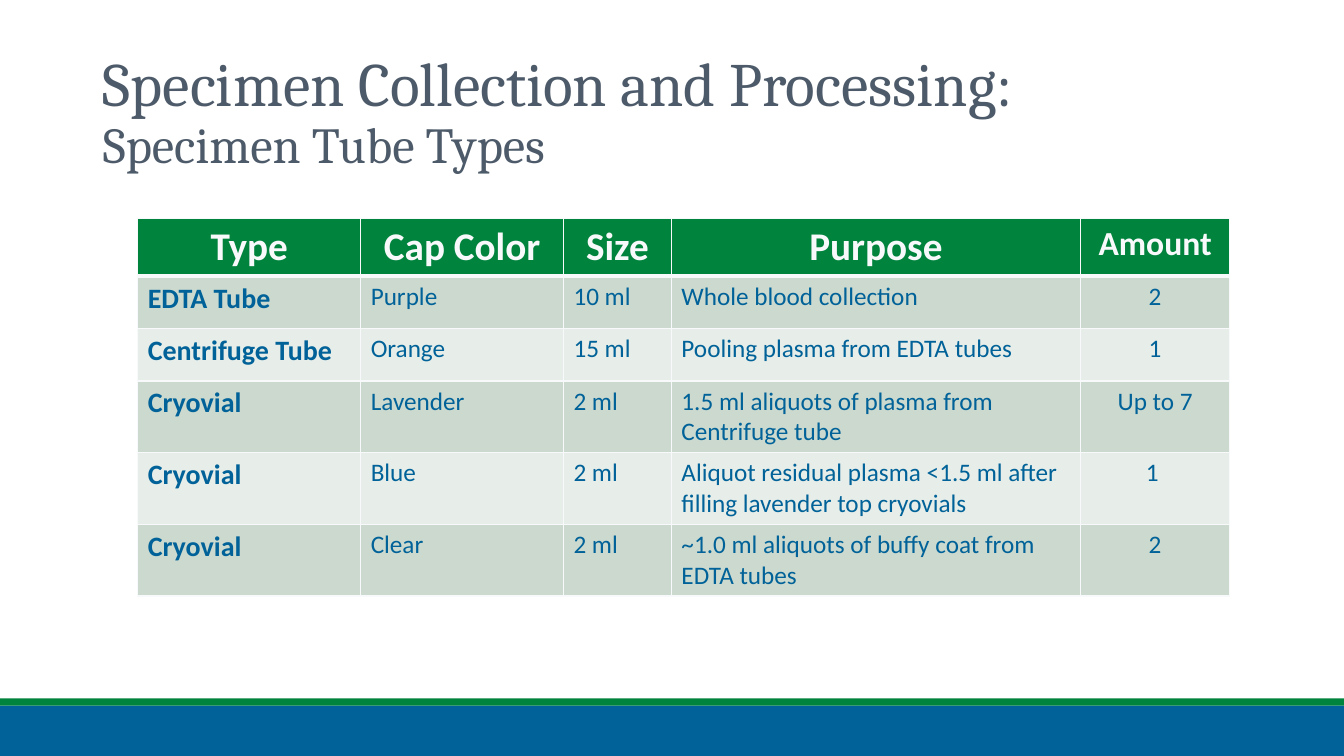
from lxml import etree
from pptx import Presentation
from pptx.dml.color import RGBColor
from pptx.enum.shapes import MSO_SHAPE
from pptx.enum.text import MSO_ANCHOR, MSO_AUTO_SIZE, PP_ALIGN
from pptx.oxml.ns import qn
from pptx.util import Cm, Pt

RECT = MSO_SHAPE.RECTANGLE
MIDDLE = MSO_ANCHOR.MIDDLE
NO_FIT = MSO_AUTO_SIZE.NONE
LEFT, CENTER = PP_ALIGN.LEFT, PP_ALIGN.CENTER

COLORS = {
    "blue": "006298",
    "green": "00843D",
    "slate": "4D5A69",
    "border": "F8F9FA",
    "band_dark": "CCD9CE",
    "band_light": "E7EDE8",
}
SLIDE_W, SLIDE_H = 33.87, 19.05
COL_WIDTHS = [5.62, 5.11, 2.72, 10.31, 3.76]
ROW_HEIGHTS = [1.32, 1.32, 1.32, 1.57, 1.65, 1.32]
ROWS = [
    ["Type", "Cap Color", "Size", "Purpose", "Amount"],
    ["EDTA Tube", "Purple", "10 ml", "Whole blood collection", "2"],
    ["Centrifuge Tube", "Orange", "15 ml", "Pooling plasma from EDTA tubes", "1"],
    ["Cryovial", "Lavender", "2 ml",
     "1.5 ml aliquots of plasma from Centrifuge tube", "Up to 7"],
    ["Cryovial", "Blue", "2 ml",
     "Aliquot residual plasma <1.5 ml after filling lavender top cryovials", "1 "],
    ["Cryovial", "Clear", "2 ml",
     "~1.0 ml aliquots of buffy coat from EDTA tubes", "2"],
]


def rgb(name):
    return RGBColor.from_string(COLORS[name])


def add_run(p, text, color, **formats):
    r = p.add_run()
    r.text = text
    r.font.color.rgb = rgb(color)
    for name, value in formats.items():
        setattr(r.font, name, value)


def add_band(s, top, height, color):
    sp = s.shapes.add_shape(RECT, Cm(0), Cm(top), Cm(SLIDE_W), Cm(height))
    sp.shadow.inherit = False
    sp.fill.solid()
    sp.fill.fore_color.rgb = rgb(color)
    sp.line.fill.background()


def set_title(s, heading, subheading):
    sp = s.shapes.title
    box = {"left": 2.34, "top": 1.02, "width": 29.21, "height": 3.68}
    for name, value in box.items():
        setattr(sp, name, Cm(value))
    tf = sp.text_frame
    formats = {"word_wrap": True, "auto_size": NO_FIT, "vertical_anchor": MIDDLE}
    for name, value in formats.items():
        setattr(tf, name, value)
    p = tf.paragraphs[0]
    p.alignment = LEFT
    p.line_spacing = 0.9
    add_run(p, heading, "slate", name="Cambria", size=Pt(44))
    p.add_line_break()
    add_run(p, subheading, "slate", name="Cambria", size=Pt(36))


def set_borders(cell, widths):
    tcPr = cell._tc.get_or_add_tcPr()
    for side, width in widths.items():
        ln = etree.SubElement(tcPr, qn(f"a:ln{side}"), w=str(Pt(width)))
        fill = etree.SubElement(ln, qn("a:solidFill"))
        etree.SubElement(fill, qn("a:srgbClr"), val=COLORS["border"])


def format_cell(cell, text, row, col):
    header = row == 0
    last = col == len(COL_WIDTHS) - 1
    if header:
        fill, color, size = "green", "border", 24 if last else 28
    else:
        fill = "band_dark" if row % 2 else "band_light"
        color, size = "blue", 18 if col else 20
    set_borders(cell, {"L": 1, "R": 1, "T": 3 if row == 1 else 1, "B": 3 if header else 1})
    cell.fill.solid()
    cell.fill.fore_color.rgb = rgb(fill)
    p = cell.text_frame.paragraphs[0]
    p.alignment = CENTER if header or last else LEFT
    add_run(p, text, color, name="Calibri", size=Pt(size), bold=header or col == 0)


def add_tube_table(s):
    table = s.shapes.add_table(
        len(ROWS), len(COL_WIDTHS), Cm(3.47), Cm(5.5),
        Cm(sum(COL_WIDTHS)), Cm(sum(ROW_HEIGHTS))).table
    for column, width in zip(table.columns, COL_WIDTHS):
        column.width = Cm(width)
    for row, height in zip(table.rows, ROW_HEIGHTS):
        row.height = Cm(height)
    for i, texts in enumerate(ROWS):
        for j, text in enumerate(texts):
            format_cell(table.cell(i, j), text, i, j)


def main():
    prs = Presentation()
    prs.slide_width, prs.slide_height = Cm(SLIDE_W), Cm(SLIDE_H)
    s = prs.slides.add_slide(prs.slide_layouts[5])
    add_band(s, 17.78, 1.27, "blue")
    add_band(s, 17.6, 0.18, "green")
    set_title(s, "Specimen Collection and Processing:", "Specimen Tube Types")
    add_tube_table(s)
    prs.save("out.pptx")


if __name__ == "__main__":
    main()
